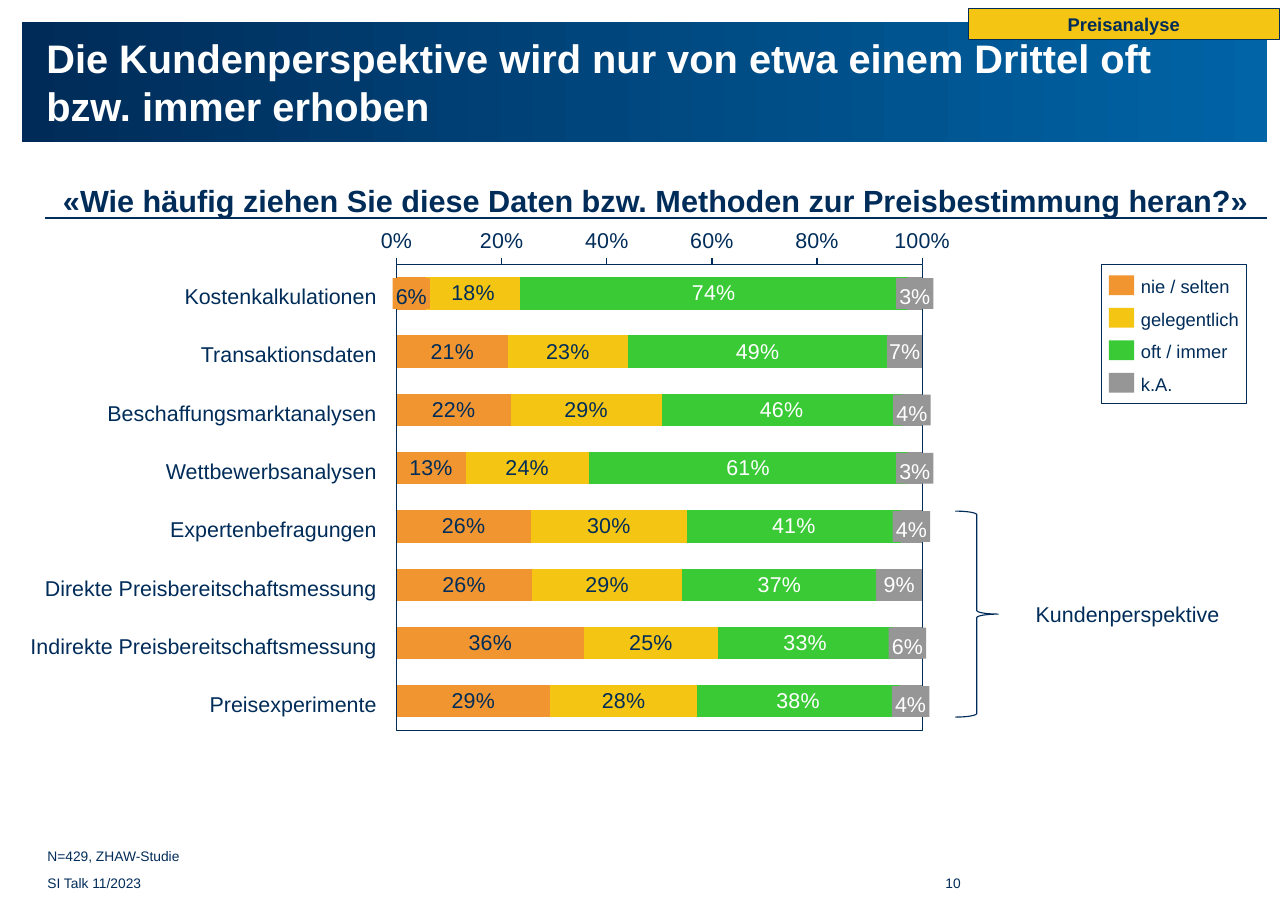
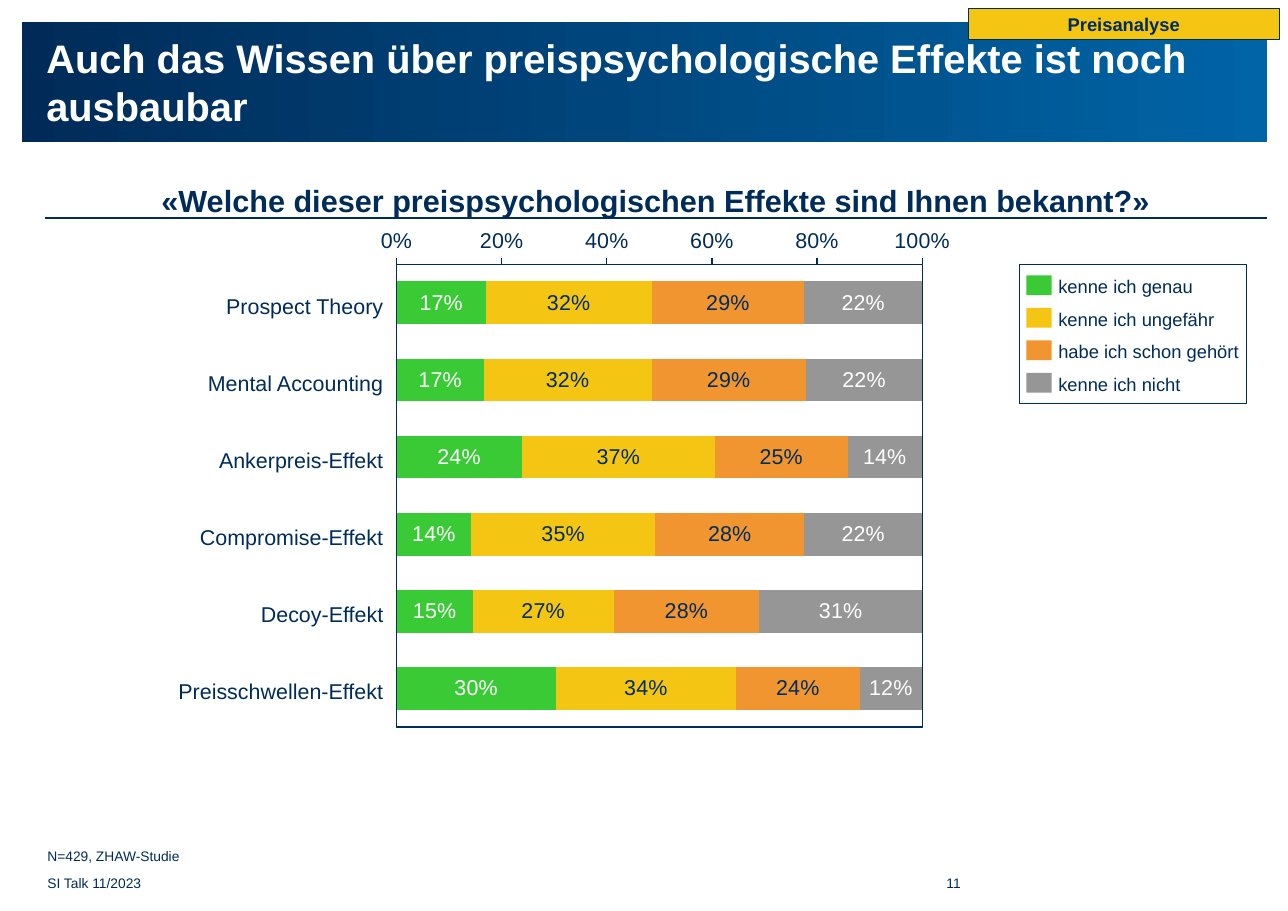
"""Build two survey slides on pricing methods, laid out on a 0.1 inch grid."""
from pptx import Presentation
from pptx import util as u
from pptx.chart.data import CategoryChartData
from pptx.dml.color import RGBColor
from pptx.enum import chart as ch
from pptx.enum import shapes, text
from pptx.oxml import parse_xml
from pptx.oxml.ns import nsdecls, qn

COLORS = {
    "navy": "002C59", "band_start": "002B58", "band_end": "0064A6", "white": "FFFFFF",
    "orange": "F09530", "yellow": "F5C513", "green": "3ACA36", "gray": "969696",
}
LABEL_COLORS = {"orange": "navy", "yellow": "navy", "green": "white", "gray": "white"}
FONT = "Arial"
COLUMNS, ROWS = 116.9, 82.7
PLOT_LEFT, PLOT_TOP, PLOT_WIDTH = 36, 24, 47.7
CHART_LEFT, CHART_TOP, CHART_WIDTH = 32.4, 20.6, 56
AXIS_MARGIN = 8.9
MIN_INSIDE = 6
LEFT, CENTER, RIGHT = text.PP_ALIGN.LEFT, text.PP_ALIGN.CENTER, text.PP_ALIGN.RIGHT


def cells(count):
    return u.Inches(count / 10)


def area(*box):
    return [cells(length) for length in box]


def rgb(color):
    return RGBColor.from_string(COLORS[color])


def style_font(font, size, color="navy", bold=False):
    font.name, font.size, font.bold = FONT, u.Pt(size), bold
    font.color.rgb = rgb(color)


def write(frame, words, size, color="navy", bold=False, align=LEFT, spacing=None,
          anchor=text.MSO_ANCHOR.MIDDLE, wrap=True):
    frame.margin_left = frame.margin_right = frame.margin_top = frame.margin_bottom = 0
    frame.word_wrap = wrap
    frame.auto_size = text.MSO_AUTO_SIZE.NONE
    frame.vertical_anchor = anchor
    frame.text = words
    paragraph = frame.paragraphs[0]
    paragraph.alignment = align
    if spacing:
        paragraph.line_spacing = spacing
    style_font(paragraph.font, size, color, bold)


def add_label(slide, box, words, size, **style):
    write(slide.shapes.add_textbox(*area(*box)).text_frame, words, size, **style)


def add_figure(slide, box, fill=None, line=None, kind=shapes.MSO_SHAPE.RECTANGLE):
    figure = slide.shapes.add_shape(kind, *area(*box))
    figure.shadow.inherit = False
    if fill:
        figure.fill.solid()
        figure.fill.fore_color.rgb = rgb(fill)
    else:
        figure.fill.background()
    if line:
        figure.line.color.rgb = rgb("navy")
        figure.line.width = u.Pt(line)
    else:
        figure.line.fill.background()
    return figure


def add_rule(slide, left, right, top):
    rule = slide.shapes.add_connector(
        shapes.MSO_CONNECTOR.STRAIGHT, *area(left, top, right, top))
    rule.line.color.rgb = rgb("navy")
    rule.line.width = u.Pt(1.5)
    rule._element.spPr.append(parse_xml(f"<a:effectLst {nsdecls('a')}/>"))


def move_band_to_layout(slide):
    band = add_figure(slide, (2, 2, 113, 10.9))
    band.fill.gradient()
    band.fill.gradient_angle = 0
    for stop, color in zip(band.fill.gradient_stops, ("band_start", "band_end")):
        stop.color.rgb = rgb(color)
    slide.slide_layout.shapes._spTree.insert(2, band._element)


def add_framed_slide(deck, title, question, number):
    slide = deck.slides.add_slide(deck.slide_layouts[5])
    heading = slide.shapes.title
    heading.left, heading.top, heading.width, heading.height = area(4.2, 2.8, 108.6, 9.2)
    write(heading.text_frame, title, 26, "white", bold=True)
    add_label(slide, (4.1, 16.5, 110.9, 3.4), question, 20, bold=True, align=CENTER,
              anchor=text.MSO_ANCHOR.TOP)
    add_rule(slide, 4.1, 115, 19.8)
    add_label(slide, (4.3, 77, 43.8, 1.5), "N=429, ZHAW-Studie", 9)
    add_label(slide, (4.3, 79.4, 16.5, 1.5), "SI Talk 11/2023", 9)
    add_label(slide, (78.5, 79.4, 8.7, 1.5), str(number), 9, align=RIGHT)
    tag = add_figure(slide, (87.9, 0.8, 28.2, 2.8), "yellow", 0.75)
    write(tag.text_frame, "Preisanalyse", 12, bold=True, align=CENTER)
    return slide


def place_plot(chart, plot_height):
    plot_area = chart._chartSpace.chart.plotArea
    for automatic in plot_area.findall(qn("c:layout")):
        plot_area.remove(automatic)
    chart_height = plot_height + AXIS_MARGIN
    shares = {
        "x": (PLOT_LEFT - CHART_LEFT) / CHART_WIDTH,
        "y": (PLOT_TOP - CHART_TOP) / chart_height,
        "w": PLOT_WIDTH / CHART_WIDTH,
        "h": plot_height / chart_height,
    }
    modes = '<c:xMode val="edge"/><c:yMode val="edge"/>'
    lengths = "".join(f'<c:{key} val="{share:.4f}"/>' for key, share in shares.items())
    plot_area.insert(0, parse_xml(
        f'<c:layout {nsdecls("c")}><c:manualLayout><c:layoutTarget val="inner"/>'
        f"{modes}{lengths}</c:manualLayout></c:layout>"))
    plot_area.append(parse_xml(
        f'<c:spPr {nsdecls("c", "a")}><a:noFill/><a:ln w="{u.Pt(0.75)}"><a:solidFill>'
        f'<a:srgbClr val="{COLORS["navy"]}"/></a:solidFill></a:ln></c:spPr>'))


def format_axes(chart):
    categories, percent = chart.category_axis, chart.value_axis
    categories.reverse_order = True
    categories.crosses = ch.XL_AXIS_CROSSES.MAXIMUM
    categories.tick_label_position = ch.XL_TICK_LABEL_POSITION.NONE
    categories.major_tick_mark = ch.XL_TICK_MARK.NONE
    percent.minimum_scale, percent.maximum_scale, percent.major_unit = 0, 100, 20
    percent.major_tick_mark = ch.XL_TICK_MARK.OUTSIDE
    percent.tick_labels.number_format = '0"%"'
    percent.tick_labels.number_format_is_linked = False
    style_font(percent.tick_labels.font, 14)
    for axis in (categories, percent):
        axis.has_major_gridlines = False
        axis.format.line.color.rgb = rgb("navy")
        axis.format.line.width = u.Pt(0.75)


def add_stacked_bars(slide, answers, survey, pitch):
    plot_height = pitch * len(survey)
    data = CategoryChartData()
    data.categories = list(survey)
    for answer, shares in zip(answers, zip(*survey.values())):
        data.add_series(answer, shares)
    chart = slide.shapes.add_chart(
        ch.XL_CHART_TYPE.BAR_STACKED,
        *area(CHART_LEFT, CHART_TOP, CHART_WIDTH, plot_height + AXIS_MARGIN), data).chart
    chart.has_legend = chart.has_title = False
    style_font(chart.font, 10)
    bars = chart.plots[0]
    bars.gap_width, bars.overlap, bars.vary_by_categories = 80, 100, False
    for series, color in zip(bars.series, answers.values()):
        series.format.fill.solid()
        series.format.fill.fore_color.rgb = rgb(color)
        values = series.data_labels
        values.show_value = True
        values.number_format = f'[<{MIN_INSIDE}]"";0"%"'
        values.number_format_is_linked = False
        values.position = ch.XL_LABEL_POSITION.CENTER
        style_font(values.font, 14, LABEL_COLORS[color])
    format_axes(chart)
    place_plot(chart, plot_height)


def add_row_labels(slide, answers, survey, pitch, right):
    for row, (method, shares) in enumerate(survey.items()):
        top = PLOT_TOP + (row + 0.5) * pitch - 1.4
        add_label(slide, (2, top, right - 2, 2.8), method, 14, align=RIGHT, spacing=1.2)
        start = 0
        for share, color in zip(shares, answers.values()):
            if share < MIN_INSIDE:
                middle = PLOT_LEFT + (start + share / 2) / 100 * PLOT_WIDTH
                small = add_figure(slide, (middle - 1.7, top, 3.4, 2.8), color)
                write(small.text_frame, f"{share:.0f}%", 14, LABEL_COLORS[color],
                      align=CENTER, spacing=1.2, wrap=False)
            start += share


def add_legend(slide, answers, left):
    right = 113.1
    add_figure(slide, (left, PLOT_TOP, right - left, 12.6), line=0.5)
    for row, (answer, color) in enumerate(answers.items()):
        top = PLOT_TOP + 0.6 + row * 2.95
        add_figure(slide, (left + 0.65, top + 0.4, 2.3, 1.8), color)
        add_label(slide, (left + 3.55, top, right - left - 3.55, 2.4), answer, 12,
                  spacing=1.2, wrap=False)


def add_survey(slide, answers, survey, pitch, label_right, legend_left):
    add_stacked_bars(slide, answers, survey, pitch)
    add_row_labels(slide, answers, survey, pitch, label_right)
    add_legend(slide, answers, legend_left)


def add_customer_brace(slide):
    add_figure(slide, (86.7, 46.4, 3.9, 18.7), line=0.75, kind=shapes.MSO_SHAPE.RIGHT_BRACE)
    add_label(slide, (93.3, 52.5, 17.4, 6.4), "Kundenperspektive", 14, align=RIGHT)


def main():
    deck = Presentation()
    deck.slide_width, deck.slide_height = area(COLUMNS, ROWS)

    methods = add_framed_slide(
        deck, "Die Kundenperspektive wird nur von etwa einem Drittel oft bzw. immer erhoben",
        "«Wie häufig ziehen Sie diese Daten bzw. Methoden zur Preisbestimmung heran?»", 10)
    move_band_to_layout(methods)
    frequency = {"nie / selten": "orange", "gelegentlich": "yellow",
                 "oft / immer": "green", "k.A.": "gray"}
    add_survey(methods, frequency, {
        "Kostenkalkulationen": (5.6, 17.9, 73.7, 2.8),
        "Transaktionsdaten": (21.2, 22.8, 49.4, 6.6),
        "Beschaffungsmarktanalysen": (21.7, 28.7, 45.7, 3.9),
        "Wettbewerbsanalysen": (13.1, 23.5, 60.6, 2.8),
        "Expertenbefragungen": (25.5, 29.8, 40.6, 4.1),
        "Direkte Preisbereitschaftsmessung": (25.7, 28.7, 36.9, 8.7),
        "Indirekte Preisbereitschaftsmessung": (35.7, 25.4, 33.3, 5.6),
        "Preisexperimente": (29.2, 28, 38.4, 4.4),
    }, pitch=5.29, label_right=34.2, legend_left=100)
    add_customer_brace(methods)

    effects = add_framed_slide(
        deck, "Auch das Wissen über preispsychologische Effekte ist noch ausbaubar",
        "«Welche dieser preispsychologischen Effekte sind Ihnen bekannt?»", 11)
    familiarity = {"kenne ich genau": "green", "kenne ich ungefähr": "yellow",
                   "habe ich schon gehört": "orange", "kenne ich nicht": "gray"}
    add_survey(effects, familiarity, {
        "Prospect Theory": (17, 31.5, 29.1, 22.4),
        "Mental Accounting": (16.6, 31.9, 29.4, 22.1),
        "Ankerpreis-Effekt": (23.8, 36.8, 25.2, 14.2),
        "Compromise-Effekt": (14.2, 35, 28.4, 22.4),
        "Decoy-Effekt": (14.5, 26.8, 27.7, 31),
        "Preisschwellen-Effekt": (30.3, 34.3, 23.5, 11.9),
    }, pitch=7, label_right=34.8, legend_left=92.5)

    deck.save("out.pptx")


if __name__ == "__main__":
    main()
